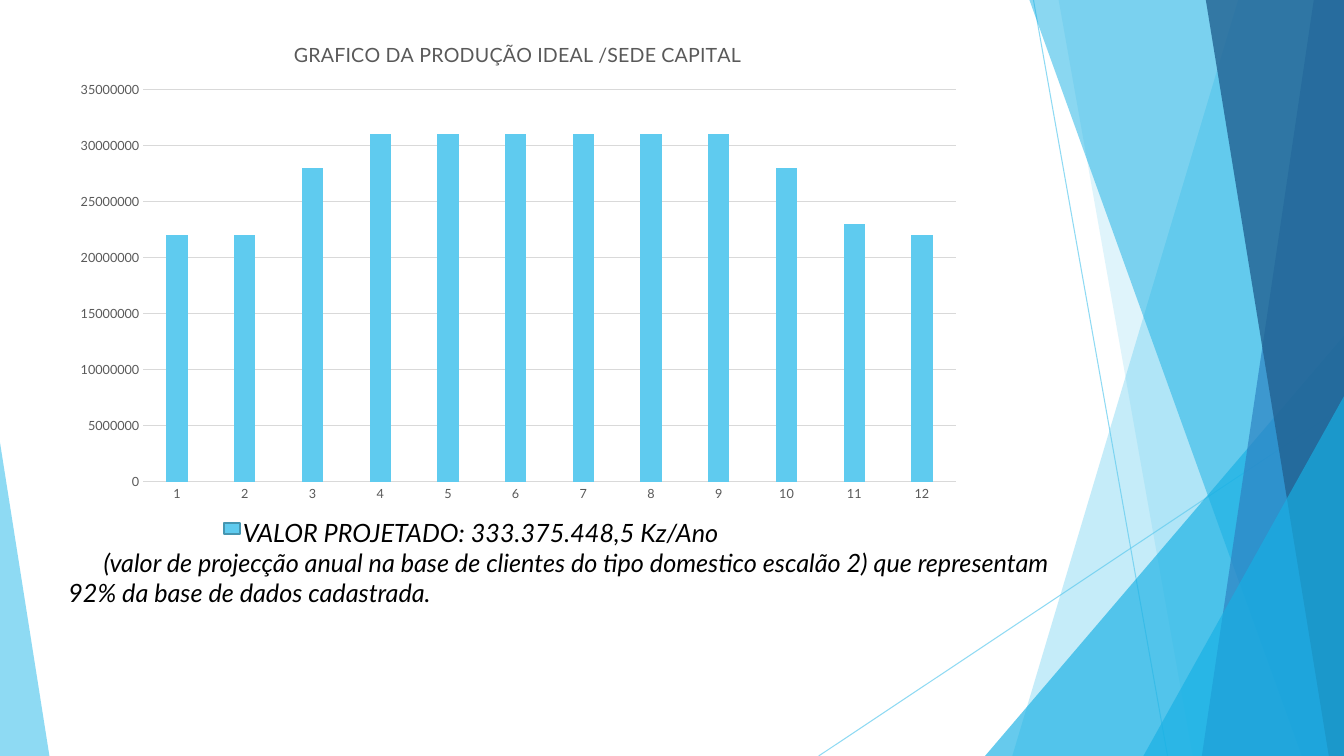
from dataclasses import dataclass

import pptx
import pptx.chart.data
import pptx.dml.color
import pptx.enum.chart
import pptx.enum.shapes
import pptx.oxml
import pptx.oxml.ns
import pptx.util

PX = 9144  # EMU in one px, 100 px to the inch
WIDTH, HEIGHT = 1333, 750
CHART_WIDTH, CHART_HEIGHT = 904, 485


@dataclass(frozen=True)
class Theme:
    font: str = "Lato"
    sky: str = "5FCBEF"
    cyan: str = "17B0E4"
    blue: str = "2E83C3"
    navy: str = "226292"
    swatch_edge: str = "4696B1"
    text: str = "000000"
    muted: str = "595959"
    grid: str = "D9D9D9"
    body_size: float = 18
    title_size: float = 14
    axis_size: float = 9
    hairline: float = 0.75
    swatch_line: float = 1.5


THEME = Theme()


@dataclass(frozen=True)
class Ray:
    start: tuple[int, int]
    end: tuple[int, int]


@dataclass(frozen=True)
class Facet:
    """A band reaching the right edge, with a slanted left side."""
    top: int
    bottom: int
    color: str
    opacity: int


@dataclass(frozen=True)
class Wedge:
    """A right triangle standing on the bottom edge."""
    left: int
    top: int
    width: int
    apex: int
    color: str
    opacity: int


@dataclass(frozen=True)
class Note:
    text: str
    left: int
    top: int
    width: int
    height: int
    indent: int = 0


RAYS = [Ray((1025, 0), (1158, 750)), Ray((1333, 403), (812, 750))]
FACETS = [
    Facet(1228, 1004, THEME.sky, 36),
    Facet(1050, 1183, THEME.sky, 20),
    Wedge(977, 333, 356, 1, THEME.cyan, 66),
    Facet(1021, 1291, THEME.cyan, 50),
    Facet(1303, 1192, THEME.blue, 70),
    Facet(1196, 1318, THEME.navy, 80),
    Wedge(1134, 393, 199, 1, THEME.cyan, 66),
    Wedge(0, 439, 49, 0, THEME.sky, 70),
]
NOTES = [
    Note("VALOR PROJETADO: 333.375.448,5 Kz/Ano", 231, 508, 590, 40),
    Note("(valor de projecção anual na base de clientes do tipo domestico "
         "escalão 2) que representam 92% da base de dados cadastrada.",
         58, 538, 1000, 70, indent=35),
]
MONTHLY_VALUES = [22_000_000] * 2 + [28_000_000] + [31_000_000] * 6 + [
    28_000_000, 23_000_000, 22_000_000]


def rgb(color: str) -> pptx.dml.color.RGBColor:
    return pptx.dml.color.RGBColor.from_string(color)


def set_opacity(sp, percent: int) -> None:
    for clr in sp._element.spPr.iter(pptx.oxml.ns.qn("a:srgbClr")):
        alpha = clr.makeelement(pptx.oxml.ns.qn("a:alpha"), {"val": str(percent * 1000)})
        clr.append(alpha)


def set_font(font, size: float, color: str, italic: bool = False) -> None:
    font.name = THEME.font
    font.size = pptx.util.Pt(size)
    font.bold = False
    font.italic = italic
    font.color.rgb = rgb(color)


def set_line(line, color: str, width: float) -> None:
    line.color.rgb = rgb(color)
    line.width = pptx.util.Pt(width)


def set_layout(parent, index: int, **lengths: int) -> None:
    """Place a chart part by px inside the chart."""
    for old in parent.findall(pptx.oxml.ns.qn("c:layout")):
        parent.remove(old)
    whole = {"x": CHART_WIDTH, "y": CHART_HEIGHT, "w": CHART_WIDTH, "h": CHART_HEIGHT}
    target = '<c:layoutTarget val="inner"/>' if "w" in lengths else ""
    modes = "".join(f'<c:{k}Mode val="edge"/>' for k in ("x", "y"))
    sizes = "".join(f'<c:{k} val="{v / whole[k]}"/>' for k, v in lengths.items())
    parent.insert(index, pptx.oxml.parse_xml(
        f'<c:layout {pptx.oxml.ns.nsdecls("c")}><c:manualLayout>'
        f'{target}{modes}{sizes}</c:manualLayout></c:layout>'))


def draw_ray(slide, ray: Ray) -> None:
    line = slide.shapes.add_connector(
        pptx.enum.shapes.MSO_CONNECTOR.STRAIGHT,
        *(v * PX for v in ray.start + ray.end))
    set_line(line.line, THEME.sky, THEME.hairline)
    set_opacity(line, 70)
    spPr = line._element.spPr
    spPr.append(spPr.makeelement(pptx.oxml.ns.qn("a:effectLst"), {}))


def draw_facet(slide, facet: Facet | Wedge) -> None:
    if isinstance(facet, Wedge):
        sp = slide.shapes.add_shape(
            pptx.enum.shapes.MSO_SHAPE.ISOSCELES_TRIANGLE, facet.left * PX,
            facet.top * PX, facet.width * PX, (HEIGHT - facet.top) * PX)
        sp.adjustments[0] = facet.apex
    else:
        builder = slide.shapes.build_freeform(facet.top, 0, scale=PX)
        builder.add_line_segments(
            [(WIDTH, 0), (WIDTH, HEIGHT), (facet.bottom, HEIGHT)], close=True)
        sp = builder.convert_to_shape()
    sp.shadow.inherit = False
    sp.fill.solid()
    sp.fill.fore_color.rgb = rgb(facet.color)
    sp.line.fill.background()
    set_opacity(sp, facet.opacity)


def draw_note(slide, note: Note) -> None:
    box = slide.shapes.add_textbox(
        note.left * PX, note.top * PX, note.width * PX, note.height * PX)
    tf = box.text_frame
    tf.word_wrap = True
    p = tf.paragraphs[0]
    p.text = note.text
    if note.indent:
        p._p.get_or_add_pPr().set("indent", str(note.indent * PX))
    for r in p.runs:
        set_font(r.font, THEME.body_size, THEME.text, italic=True)


def draw_swatch(slide) -> None:
    sp = slide.shapes.add_shape(
        pptx.enum.shapes.MSO_SHAPE.RECTANGLE, 222 * PX, 519 * PX, 16 * PX, 11 * PX)
    sp.shadow.inherit = False
    sp.fill.solid()
    sp.fill.fore_color.rgb = rgb(THEME.sky)
    set_line(sp.line, THEME.swatch_edge, THEME.swatch_line)


def draw_chart(slide) -> None:
    data = pptx.chart.data.CategoryChartData()
    data.categories = [str(month) for month in range(1, 13)]
    data.add_series("Series 1", MONTHLY_VALUES)
    chart = slide.shapes.add_chart(
        pptx.enum.chart.XL_CHART_TYPE.COLUMN_CLUSTERED,
        62 * PX, 23 * PX, CHART_WIDTH * PX, CHART_HEIGHT * PX, data).chart
    chart.has_legend = False
    set_font(chart.font, THEME.axis_size, THEME.muted)

    # Title and plot area
    chart.has_title = True
    tf = chart.chart_title.text_frame
    tf.text = "GRAFICO DA PRODUÇÃO IDEAL /SEDE CAPITAL"
    set_font(tf.paragraphs[0].runs[0].font, THEME.title_size, THEME.muted)
    set_layout(chart.chart_title._element, 1, x=226, y=13)
    set_layout(chart._chartSpace.chart.plotArea, 0, x=80, y=66, w=806, h=389)

    # Columns
    plot = chart.plots[0]
    plot.gap_width, plot.overlap = 219, -27
    plot.vary_by_categories = False
    fill = plot.series[0].format.fill
    fill.solid()
    fill.fore_color.rgb = rgb(THEME.sky)

    # Axes
    for axis in (chart.category_axis, chart.value_axis):
        axis.major_tick_mark = axis.minor_tick_mark = pptx.enum.chart.XL_TICK_MARK.NONE
        set_font(axis.tick_labels.font, THEME.axis_size, THEME.muted)
    set_line(chart.category_axis.format.line, THEME.grid, THEME.hairline)
    values = chart.value_axis
    values.minimum_scale, values.maximum_scale, values.major_unit = 0, 35_000_000, 5_000_000
    values.format.line.fill.background()
    set_line(values.major_gridlines.format.line, THEME.grid, THEME.hairline)


def main() -> None:
    prs = pptx.Presentation()
    prs.slide_width, prs.slide_height = WIDTH * PX, HEIGHT * PX
    slide = prs.slides.add_slide(prs.slide_layouts[6])
    # Decorative background
    for ray in RAYS:
        draw_ray(slide, ray)
    for facet in FACETS:
        draw_facet(slide, facet)
    # Content
    draw_swatch(slide)
    draw_chart(slide)
    for note in NOTES:
        draw_note(slide, note)
    prs.save("out.pptx")


if __name__ == "__main__":
    main()
